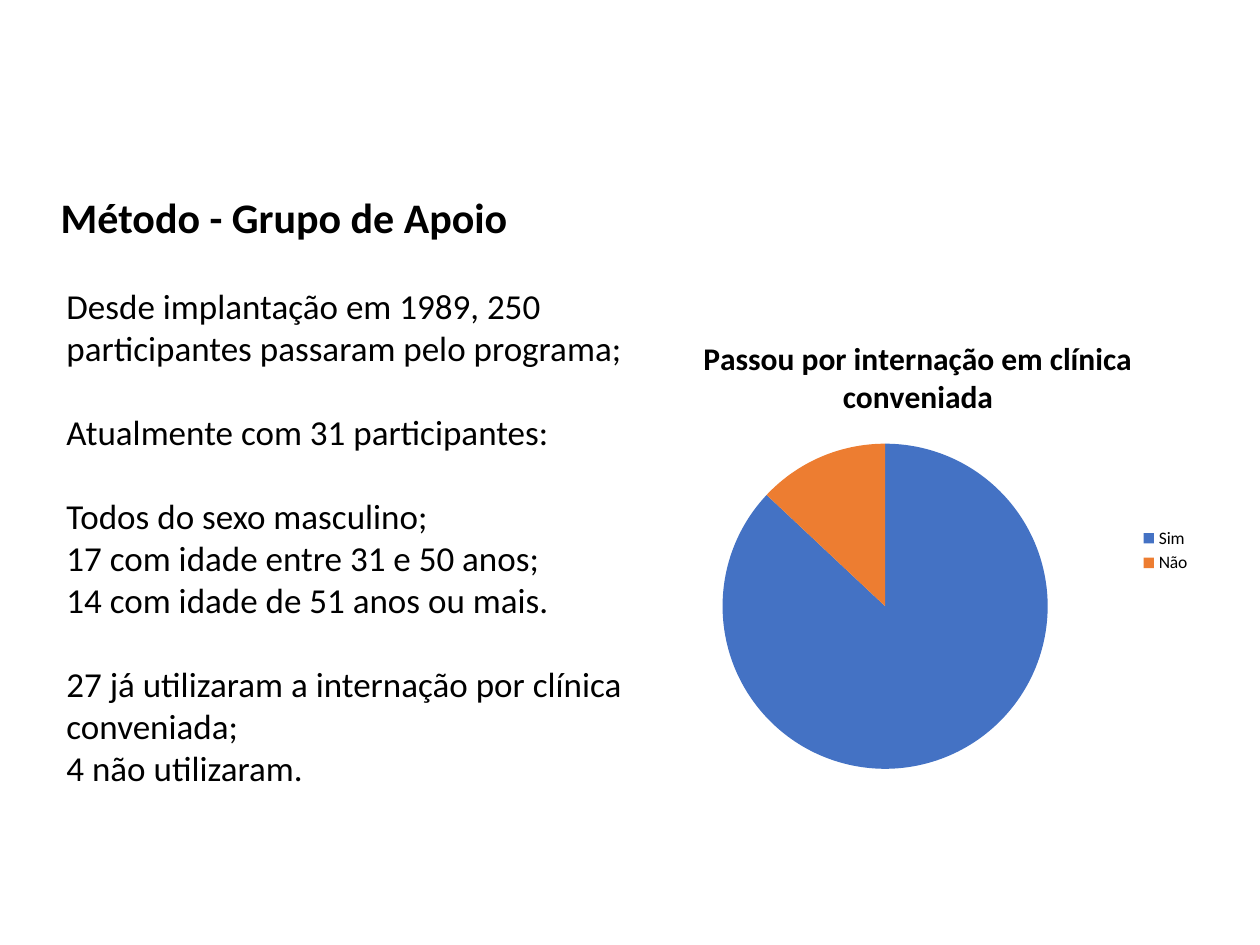
"""Builds the support group slide with its text and pie chart."""
from pptx import Presentation
from pptx.chart.data import CategoryChartData
from pptx.dml.color import RGBColor
from pptx.enum.chart import XL_CHART_TYPE, XL_LEGEND_POSITION
from pptx.enum.text import MSO_ANCHOR, MSO_AUTO_SIZE, PP_ALIGN
from pptx.util import Cm, Pt

COLORS = {"text": "000000", "Sim": "4472C4", "Não": "ED7D31"}
FONT = "Calibri"


def write(para, text, size=20, bold=False, before=0, line=1.0, align=PP_ALIGN.LEFT):
    para.alignment = align
    para.space_before = Pt(before)
    para.line_spacing = line
    run = para.add_run()
    run.text = text
    run.font.name = FONT
    run.font.size = Pt(size)
    run.font.bold = bold
    run.font.color.rgb = RGBColor.from_string(COLORS["text"])


prs = Presentation()
prs.slide_width, prs.slide_height = Cm(25.4), Cm(19.05)
slide = prs.slides.add_slide(prs.slide_layouts[5])

title = slide.shapes.title
title.left, title.top = Cm(0.97), Cm(3.84)
title.width, title.height = Cm(21.59), Cm(13.21)
frame = title.text_frame
frame.auto_size = MSO_AUTO_SIZE.NONE
frame.vertical_anchor = MSO_ANCHOR.TOP
write(frame.paragraphs[0], "Método - Grupo de Apoio", size=24, bold=True, line=0.9)

groups = [
    ["Desde implantação em 1989, 250 participantes passaram pelo programa;"],
    ["Atualmente com 31 participantes:"],
    [
        "Todos do sexo masculino;",
        "17 com idade entre 31 e 50 anos;",
        "14 com idade de 51 anos ou mais.",
    ],
    ["27 já utilizaram a internação por clínica conveniada;", "4 não utilizaram."],
]
body = slide.shapes.add_textbox(Cm(1.09), Cm(5.61), Cm(13.82), Cm(10.52)).text_frame
body.word_wrap = True
for g, group in enumerate(groups):
    for i, text in enumerate(group):
        first = g == 0 and i == 0
        para = body.paragraphs[0] if first else body.add_paragraph()
        write(para, text, before=24 if g and i == 0 else 0)

topic = "Passou por internação em clínica conveniada"
shares = {"Sim": 87, "Não": 13}
data = CategoryChartData()
data.categories = list(shares)
data.add_series(topic, list(shares.values()))
chart = slide.shapes.add_chart(
    XL_CHART_TYPE.PIE, Cm(12.75), Cm(6.35), Cm(11.51), Cm(9.5), data
).chart
chart.font.name = FONT
chart.font.size = Pt(10)
chart.font.color.rgb = RGBColor.from_string(COLORS["text"])
chart.has_title = True
chart.chart_title.include_in_layout = False
head = chart.chart_title.text_frame.paragraphs[0]
write(head, topic, size=18, bold=True, align=PP_ALIGN.CENTER)
chart.has_legend = True
chart.legend.position = XL_LEGEND_POSITION.RIGHT
chart.legend.include_in_layout = False

plot = chart.plots[0]
plot.vary_by_categories = True
for i, name in enumerate(shares):
    slice_fmt = plot.series[0].points[i].format
    slice_fmt.fill.solid()
    slice_fmt.fill.fore_color.rgb = RGBColor.from_string(COLORS[name])
    slice_fmt.line.fill.background()

prs.save("out.pptx")
